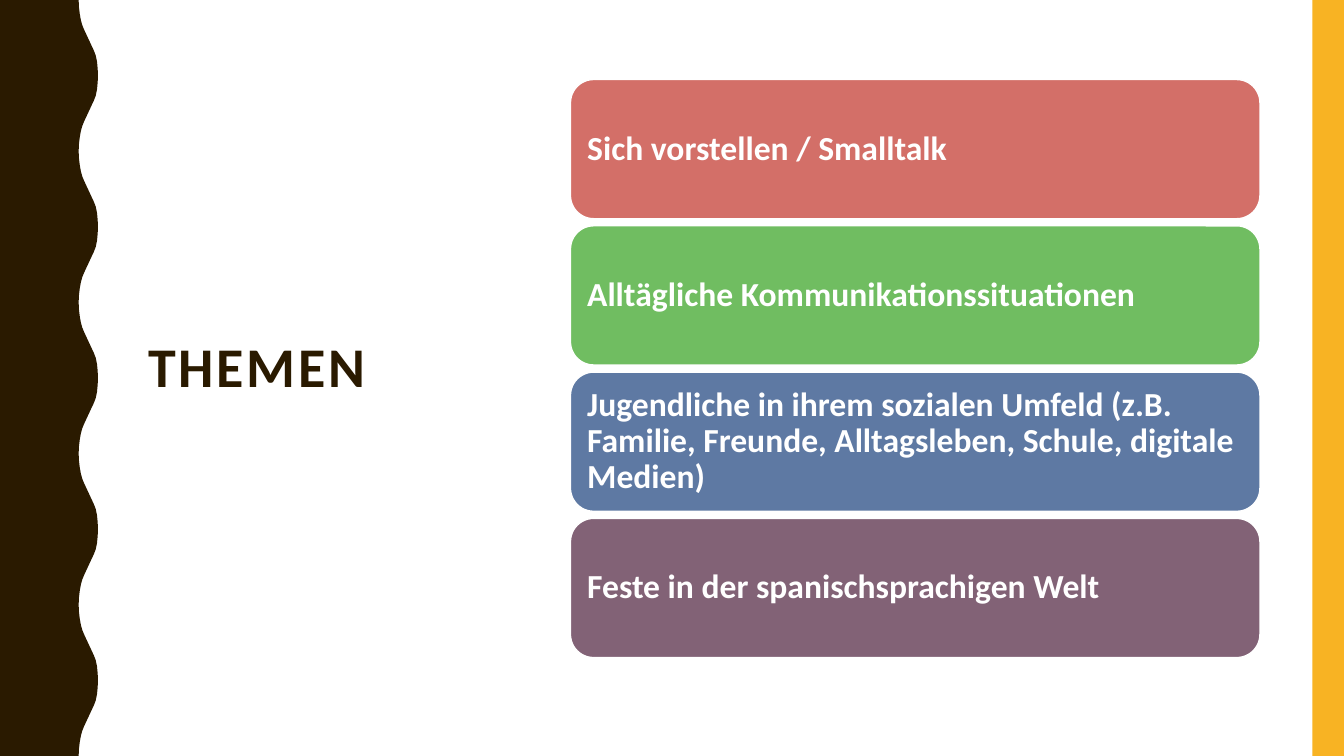
from pptx import Presentation
from pptx.dml.color import RGBColor
from pptx.enum.shapes import MSO_SHAPE
from pptx.enum.text import MSO_ANCHOR, PP_ALIGN
from pptx.util import Pt

RECTANGLE, ROUNDED = MSO_SHAPE.RECTANGLE, MSO_SHAPE.ROUNDED_RECTANGLE
MIDDLE, LEFT = MSO_ANCHOR.MIDDLE, PP_ALIGN.LEFT

TITLE = "THEMEN"
TOPICS = [
    ("Sich vorstellen / Smalltalk", "D36F68"),
    ("Alltägliche Kommunikationssituationen", "70BD61"),
    ("Jugendliche in ihrem sozialen Umfeld (z.B. Familie, Freunde, "
     "Alltagsleben, Schule, digitale Medien)", "5E79A3"),
    ("Feste in der spanischsprachigen Welt", "826276"),
]

THEME = {
    "font": "Calibri",
    "dark": "2A1A00",
    "accent": "F8B323",
    "white": "FFFFFF",
    "title_size": 40,
    "topic_size": 24,
}

SLIDE_W, SLIDE_H = 960, 540
TITLE_BOX = (98.6, 50.4, 266.4, 426.2)
STRIPE_W = 22.5
CARD_X, CARD_Y, CARD_W, CARD_H = 407.5, 56.8, 492.5, 99.4
CARD_PITCH = 104.5

# Half a wave, from trough to crest, as (x, y)
HALF_WAVE = [
    (56.2, 0), (56.4, 5), (57, 10), (57.8, 14.4), (58.8, 18), (60, 21),
    (61.4, 24), (64.2, 30), (65.6, 33), (67, 36), (68.4, 39.6), (69.3, 44),
    (69.8, 49), (70, 54),
]
WAVE_PERIOD = 108


def color(code):
    return RGBColor.from_string(code)


def paint(shape, fill, line=None):
    shape.shadow.inherit = False
    shape.fill.solid()
    shape.fill.fore_color.rgb = color(fill)
    if line:
        shape.line.color.rgb = color(line)
        shape.line.width = Pt(1)
    else:
        shape.line.fill.background()


def write(shape, text, *, size, ink, margins, spacing=0):
    """Fill a shape with one bold left-aligned paragraph; spacing is between letters."""
    frame = shape.text_frame
    frame.word_wrap = True
    frame.vertical_anchor = MIDDLE
    frame.margin_left = frame.margin_right = Pt(margins[0])
    frame.margin_top = frame.margin_bottom = Pt(margins[1])
    paragraph = frame.paragraphs[0]
    paragraph.alignment = LEFT
    paragraph.line_spacing = 0.9
    run = paragraph.add_run()
    run.text = text
    run.font.name = THEME["font"]
    run.font.size = Pt(size)
    run.font.bold = True
    run.font.color.rgb = color(ink)
    if spacing:
        run._r.get_or_add_rPr().set("spc", str(spacing * 100))


def add_wavy_edge(slide):
    full_wave = HALF_WAVE + [(x, WAVE_PERIOD - y) for x, y in HALF_WAVE[-2::-1]]
    edge = [(x, y + start) for start in range(0, SLIDE_H, WAVE_PERIOD)
            for x, y in full_wave[:-1]]
    outline = edge + [(HALF_WAVE[0][0], SLIDE_H), (0, SLIDE_H)]
    builder = slide.shapes.build_freeform(0, 0)
    builder.add_line_segments([(Pt(x), Pt(y)) for x, y in outline], close=True)
    paint(builder.convert_to_shape(), THEME["dark"])


def add_block(slide, kind, box, fill, line=None):
    block = slide.shapes.add_shape(kind, *map(Pt, box))
    paint(block, fill, line)
    return block


def main():
    deck = Presentation()
    deck.slide_width, deck.slide_height = Pt(SLIDE_W), Pt(SLIDE_H)
    slide = deck.slides.add_slide(deck.slide_layouts[5])

    add_wavy_edge(slide)
    add_block(slide, RECTANGLE, (SLIDE_W - STRIPE_W, 0, STRIPE_W, SLIDE_H),
              THEME["accent"])

    title = slide.shapes.title
    title.left, title.top, title.width, title.height = map(Pt, TITLE_BOX)
    write(title, TITLE, size=THEME["title_size"], ink=THEME["dark"],
          margins=(7.2, 3.6), spacing=2)

    for row, (topic, fill) in enumerate(TOPICS):
        box = (CARD_X, CARD_Y + row * CARD_PITCH, CARD_W, CARD_H)
        card = add_block(slide, ROUNDED, box, fill, THEME["white"])
        write(card, topic, size=THEME["topic_size"], ink=THEME["white"],
              margins=(7.2, 7.2))

    deck.save("out.pptx")


if __name__ == "__main__":
    main()
